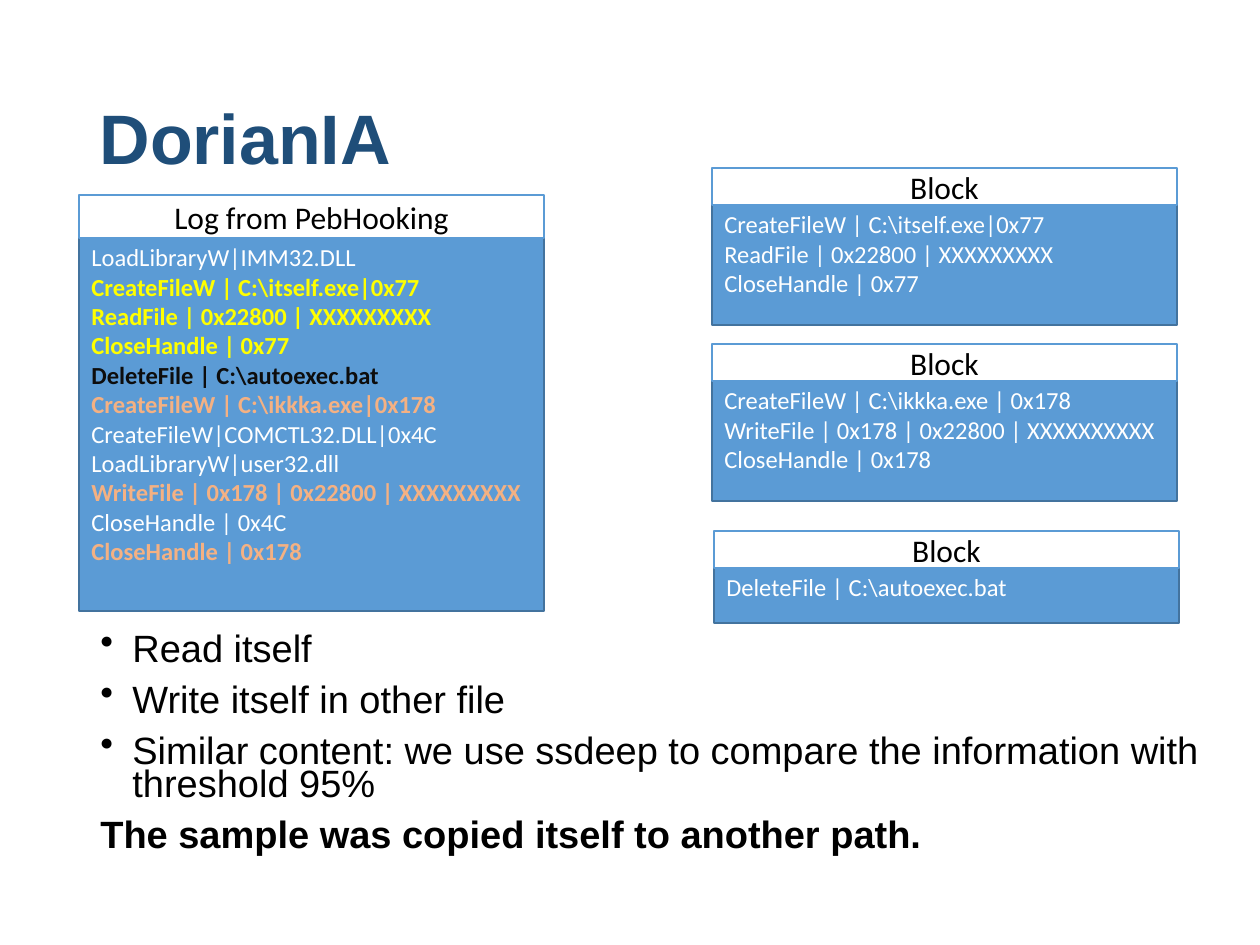
from dataclasses import dataclass

from pptx import Presentation
from pptx.dml.color import RGBColor
from pptx.enum.shapes import MSO_SHAPE as Preset
from pptx.enum.text import MSO_ANCHOR as Anchor, MSO_AUTO_SIZE as AutoSize, PP_ALIGN as Align
from pptx.oxml.xmlchemy import OxmlElement
from pptx.shapes.autoshape import Shape
from pptx.shapes.shapetree import GroupShapes
from pptx.slide import Slide
from pptx.text.text import _Paragraph as Paragraph
from pptx.util import Emu, Pt

EMU_PER_PX = 914400 / 126
HEADER_OVERLAP = 2
PANEL_WIDTH = 465
BULLET_INDENT = 32

NAVY = RGBColor(0x1F, 0x4E, 0x79)
BLUE = RGBColor(0x5B, 0x9B, 0xD5)
EDGE = RGBColor(0x43, 0x73, 0x9E)
WHITE = RGBColor(0xFF, 0xFF, 0xFF)
BLACK = RGBColor(0x00, 0x00, 0x00)
INK = RGBColor(0x0D, 0x0D, 0x0D)
YELLOW = RGBColor(0xFF, 0xFF, 0x00)
PEACH = RGBColor(0xF4, 0xB1, 0x83)


@dataclass(frozen=True)
class Entry:
    """One logged call; the highlighted ones are bold."""
    text: str
    color: RGBColor = WHITE


@dataclass(frozen=True)
class Panel:
    """A white header above a blue list of logged calls."""
    title: str
    left: int
    top: int
    header_height: int
    body_height: int
    entries: tuple[Entry, ...]


@dataclass(frozen=True)
class Point:
    """One paragraph of the findings."""
    text: str
    bullet: bool = True


PANELS = (
    Panel("Log from PebHooking", 79, 195, 43, 375, (
        Entry("LoadLibraryW|IMM32.DLL"),
        Entry("CreateFileW | C:\\itself.exe|0x77", YELLOW),
        Entry("ReadFile | 0x22800 | XXXXXXXXX", YELLOW),
        Entry("CloseHandle | 0x77", YELLOW),
        Entry("DeleteFile | C:\\autoexec.bat", INK),
        Entry("CreateFileW | C:\\ikkka.exe|0x178", PEACH),
        Entry("CreateFileW|COMCTL32.DLL|0x4C"),
        Entry("LoadLibraryW|user32.dll"),
        Entry("WriteFile | 0x178 | 0x22800 | XXXXXXXXX", PEACH),
        Entry("CloseHandle | 0x4C"),
        Entry("CloseHandle | 0x178", PEACH),
    )),
    Panel("Block", 712, 168, 37, 122, (
        Entry("CreateFileW | C:\\itself.exe|0x77"),
        Entry("ReadFile | 0x22800 | XXXXXXXXX"),
        Entry("CloseHandle | 0x77"),
    )),
    Panel("Block", 712, 344, 37, 122, (
        Entry("CreateFileW | C:\\ikkka.exe | 0x178"),
        Entry("WriteFile | 0x178 | 0x22800 | XXXXXXXXXX"),
        Entry("CloseHandle | 0x178"),
    )),
    Panel("Block", 714, 531, 37, 57, (
        Entry("DeleteFile | C:\\autoexec.bat"),
    )),
)

POINTS = (
    Point("Read itself"),
    Point("Write itself in other file"),
    Point("Similar content: we use ssdeep to compare the information with threshold 95%"),
    Point("The sample was copied itself to another path.", bullet=False),
)


def px(length: int) -> Emu:
    """Turn pixels into EMU."""
    return Emu(round(length * EMU_PER_PX))


def add_span(para: Paragraph, text: str, font: str, size: float,
             color: RGBColor, bold: bool = False) -> None:
    """Append one formatted run."""
    span = para.add_run()
    span.text = text
    span.font.name = font
    span.font.size = Pt(size)
    span.font.bold = bold
    span.font.color.rgb = color


def next_para(box: Shape, index: int) -> Paragraph:
    """Return the first paragraph of a box, or a new one."""
    frame = box.text_frame
    return frame.add_paragraph() if index else frame.paragraphs[0]


def add_box(shapes: GroupShapes, left: int, top: int, height: int,
            fill: RGBColor, line: RGBColor, anchor: Anchor) -> Shape:
    """Draw one rectangle of a panel."""
    box = shapes.add_shape(Preset.RECTANGLE, px(left), px(top), px(PANEL_WIDTH), px(height))
    box.shadow.inherit = False
    box.fill.solid()
    box.fill.fore_color.rgb = fill
    box.line.color.rgb = line
    box.line.width = Pt(1)
    box.text_frame.word_wrap = True
    box.text_frame.vertical_anchor = anchor
    return box


def add_panel(page: Slide, panel: Panel) -> None:
    """Draw a panel as a group of list and header."""
    shapes = page.shapes.add_group_shape().shapes
    body_top = panel.top + panel.header_height - HEADER_OVERLAP
    body = add_box(shapes, panel.left, body_top, panel.body_height, BLUE, EDGE, Anchor.TOP)
    for index, entry in enumerate(panel.entries):
        para = next_para(body, index)
        para.alignment = Align.LEFT
        add_span(para, entry.text, "Calibri", 14, entry.color, entry.color != WHITE)
    header = add_box(shapes, panel.left, panel.top, panel.header_height, WHITE, BLUE, Anchor.MIDDLE)
    para = next_para(header, 0)
    para.alignment = Align.CENTER
    add_span(para, panel.title, "Calibri", 18, BLACK)


def set_bullet(para: Paragraph, bullet: bool) -> None:
    """Give a paragraph a hanging indent and its bullet, if any."""
    properties = para._p.get_or_add_pPr()
    properties.set("marL", str(px(BULLET_INDENT)))
    properties.set("indent", str(-px(BULLET_INDENT)))
    mark = OxmlElement("a:buChar" if bullet else "a:buNone")
    if bullet:
        mark.set("char", "•")
    properties.append(mark)


def add_points(page: Slide) -> None:
    """Write the findings below the panels."""
    box = page.shapes.add_textbox(px(88), px(630), px(1135), px(228))
    box.text_frame.word_wrap = True
    for index, point in enumerate(POINTS):
        para = next_para(box, index)
        set_bullet(para, point.bullet)
        para.line_spacing = 0.73
        if index:
            para.space_before = Pt(10)
        add_span(para, point.text, "Arial", 21.7, BLACK, not point.bullet)


def set_title(page: Slide, text: str) -> None:
    """Place and format the title placeholder."""
    title = page.shapes.title
    title.left, title.top, title.width, title.height = px(87), px(50), px(1086), px(183)
    frame = title.text_frame
    frame.auto_size = AutoSize.NONE
    frame.vertical_anchor = Anchor.MIDDLE
    para = frame.paragraphs[0]
    para.alignment = Align.LEFT
    para.line_spacing = 0.9
    add_span(para, text, "Arial", 40, NAVY, True)


def main() -> None:
    """Build the deck and save it."""
    deck = Presentation()
    deck.slide_width, deck.slide_height = px(1260), px(945)
    page = deck.slides.add_slide(deck.slide_layouts[5])
    set_title(page, "DorianIA")
    for panel in PANELS:
        add_panel(page, panel)
    add_points(page)
    deck.save("out.pptx")


if __name__ == "__main__":
    main()
